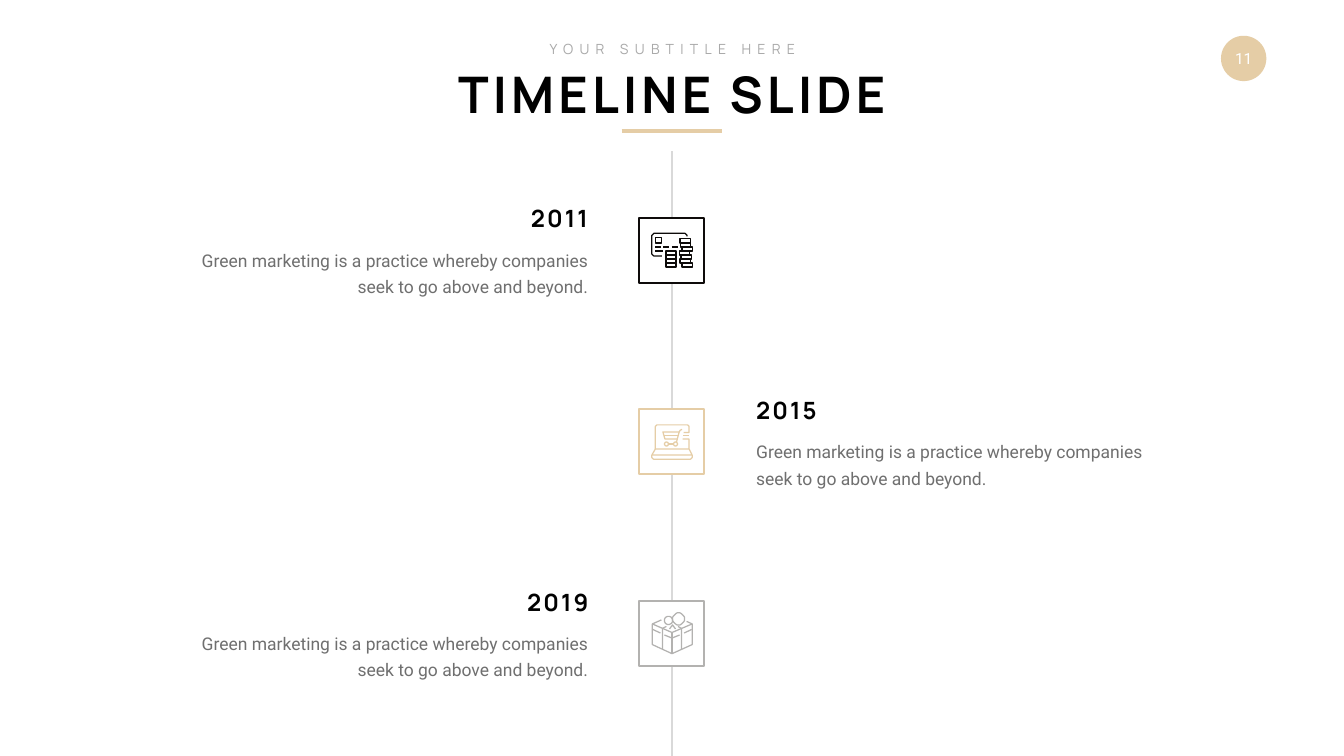
import math
from pptx import Presentation
from pptx.dml.color import RGBColor
from pptx.enum.shapes import MSO_CONNECTOR, MSO_SHAPE
from pptx.enum.text import MSO_ANCHOR, MSO_AUTO_SIZE, PP_ALIGN
from pptx.oxml import parse_xml
from pptx.oxml.ns import nsdecls
from pptx.util import Pt

PX = 9144
RECT, OVAL, STRAIGHT = MSO_SHAPE.RECTANGLE, MSO_SHAPE.OVAL, MSO_CONNECTOR.STRAIGHT
LEFT, CENTER, RIGHT = PP_ALIGN.LEFT, PP_ALIGN.CENTER, PP_ALIGN.RIGHT
TOP, MIDDLE = MSO_ANCHOR.TOP, MSO_ANCHOR.MIDDLE
GROW = MSO_AUTO_SIZE.SHAPE_TO_FIT_TEXT
BLACK, INK, GOLD, SILVER, WHITE = "000000", "0E0B0A", "E5CDA6", "B3B2B0", "FFFFFF"
GREY, PALE, RULE = "6F6F6F", "A9A9A9", "D9D9D9"


def color(value):
    return RGBColor.from_string(value)


def write(sp, text, font, size, fill, align, anchor=TOP, bold=False, spacing=0, wrap=False):
    tf = sp.text_frame
    tf.text = text
    tf.word_wrap = wrap
    tf.auto_size = GROW
    tf.vertical_anchor = anchor
    p = tf.paragraphs[0]
    p.alignment = align
    p.line_spacing = Pt(38) if wrap else 1.0
    r = p.runs[0]
    r.font.name = font
    r.font.size = Pt(size)
    r.font.bold = bold
    r.font.color.rgb = color(fill)
    if spacing:
        r.font._element.set("spc", str(spacing * 100))


prs = Presentation()
prs.slide_width, prs.slide_height = 2666 * PX, 1500 * PX
s = prs.slides.add_slide(prs.slide_layouts[5])

page = s.shapes.add_shape(OVAL, 2422 * PX, 71 * PX, 90 * PX, 90 * PX)
page.shadow.inherit = False
page.fill.solid()
page.fill.fore_color.rgb = color(GOLD)
page.line.fill.background()
write(page, "11", "Roboto", 22, WHITE, CENTER, MIDDLE)
page.text_frame.auto_size = MSO_AUTO_SIZE.NONE

title = s.shapes.title
title.left, title.top, title.width, title.height = 878 * PX, 120 * PX, 910 * PX, 131 * PX
write(title, "TIMELINE SLIDE", "Manrope", 72, BLACK, CENTER, bold=True, spacing=6)

subtitle = s.shapes.add_textbox(1061 * PX, 76 * PX, 545 * PX, 44 * PX)
write(subtitle, "YOUR SUBTITLE HERE", "Manrope", 20, PALE, CENTER, spacing=9)

for x1, y1, x2, y2, stroke, width in [
    (1333, 300, 1333, 1500, RULE, 3),
    (1233, 260, 1432, 260, GOLD, 5),
]:
    line = s.shapes.add_connector(STRAIGHT, x1 * PX, y1 * PX, x2 * PX, y2 * PX)
    line.line.color.rgb = color(stroke)
    line.line.width = Pt(width)
    line._element.spPr.append(parse_xml(f"<a:effectLst {nsdecls('a')}/>"))

payment = [
    [(95, 37), (95, 35), (91, 31), (29, 31), (25, 35), (25, 72), (29, 76), (45, 76)],
    [(33, 40), (44, 40), (44, 50), (33, 50), (33, 40)],
    [(32, 66), (47, 66)],
]
payment += [[(x, 58), (x + 11, 58)] for x in (32, 48, 65)]
coins = [(53, 66 + 8 * i) for i in range(4)]
coins += [(x, 42 + 8 * i) for i, x in enumerate((81, 82, 85, 80, 83, 81, 85))]
payment += [[(x, y), (x + 20, y), (x + 20, y + 8), (x, y + 8), (x, y)] for x, y in coins]

shop = [
    [(88, 46), (99, 46), (99, 34), (96, 31), (35, 31), (32, 34), (32, 79),
     (99, 79), (99, 59), (86, 59)],
    [(87, 52), (99, 52)],
    [(32, 79), (25, 91), (105, 91), (99, 79)],
    [(25, 91), (25, 96), (28, 99), (102, 99), (105, 96), (105, 91)],
    [(85, 40), (81, 42), (79, 46), (74, 65)],
    [(79, 45), (47, 45), (51, 59), (76, 59)],
    [(49, 52), (77, 52)],
    [(58, 69), (69, 69)],
]

gift = [
    [(44, 38), (26, 46), (26, 87), (65, 105), (105, 87), (105, 46), (94, 41)],
    [(26, 46), (65, 63), (105, 46)],
    [(65, 63), (65, 105)],
    [(54, 51), (46, 55), (46, 96)],
    [(77, 51), (84, 55), (84, 96)],
    [(27, 57), (42, 64)],
    [(50, 68), (65, 74), (80, 68)],
    [(89, 64), (104, 57)],
    [(60, 56), (66, 48), (72, 56)],
]

for icon, cx, cy, radius in [(shop, 54, 69, 4), (shop, 72, 69, 4), (gift, 58, 39, 8), (gift, 78, 36, 12)]:
    angles = [math.tau * i / 24 for i in range(25)]
    icon.append([(cx + radius * math.cos(a), cy + radius * math.sin(a)) for a in angles])

milestones = [
    ("2011", INK, payment, RIGHT, 1036, 140),
    ("2015", GOLD, shop, LEFT, 1490, 143),
    ("2019", SILVER, gift, RIGHT, 1032, 145),
]
for i, (year, accent, icon, align, year_left, year_width) in enumerate(milestones):
    top = 432 + 380 * i
    badge = s.shapes.add_shape(RECT, 1268 * PX, top * PX, 129 * PX, 129 * PX)
    badge.shadow.inherit = False
    badge.fill.solid()
    badge.fill.fore_color.rgb = color(WHITE)
    badge.line.color.rgb = color(accent)
    badge.line.width = Pt(3)

    fb = s.shapes.build_freeform(*icon[0][0], scale=PX)
    for stroke in icon:
        fb.move_to(*stroke[0])
        fb.add_line_segments(stroke[1:], close=False)
    sp = fb.convert_to_shape(1268 * PX, top * PX)
    sp.shadow.inherit = False
    sp.fill.background()
    sp.line.color.rgb = color(accent)
    sp.line.width = Pt(1.75)

    body_left = 347 if align == RIGHT else 1490
    body = s.shapes.add_textbox(body_left * PX, (top + 47) * PX, 829 * PX, 114 * PX)
    write(body, "Green marketing is a practice whereby companies seek to go above and beyond.",
          "Roboto", 25, GREY, align, wrap=True)
    label = s.shapes.add_textbox(year_left * PX, (top - 32) * PX, year_width * PX, 67 * PX)
    write(label, year, "Manrope", 34, BLACK, align, MIDDLE, bold=True, spacing=3)

prs.save("out.pptx")
